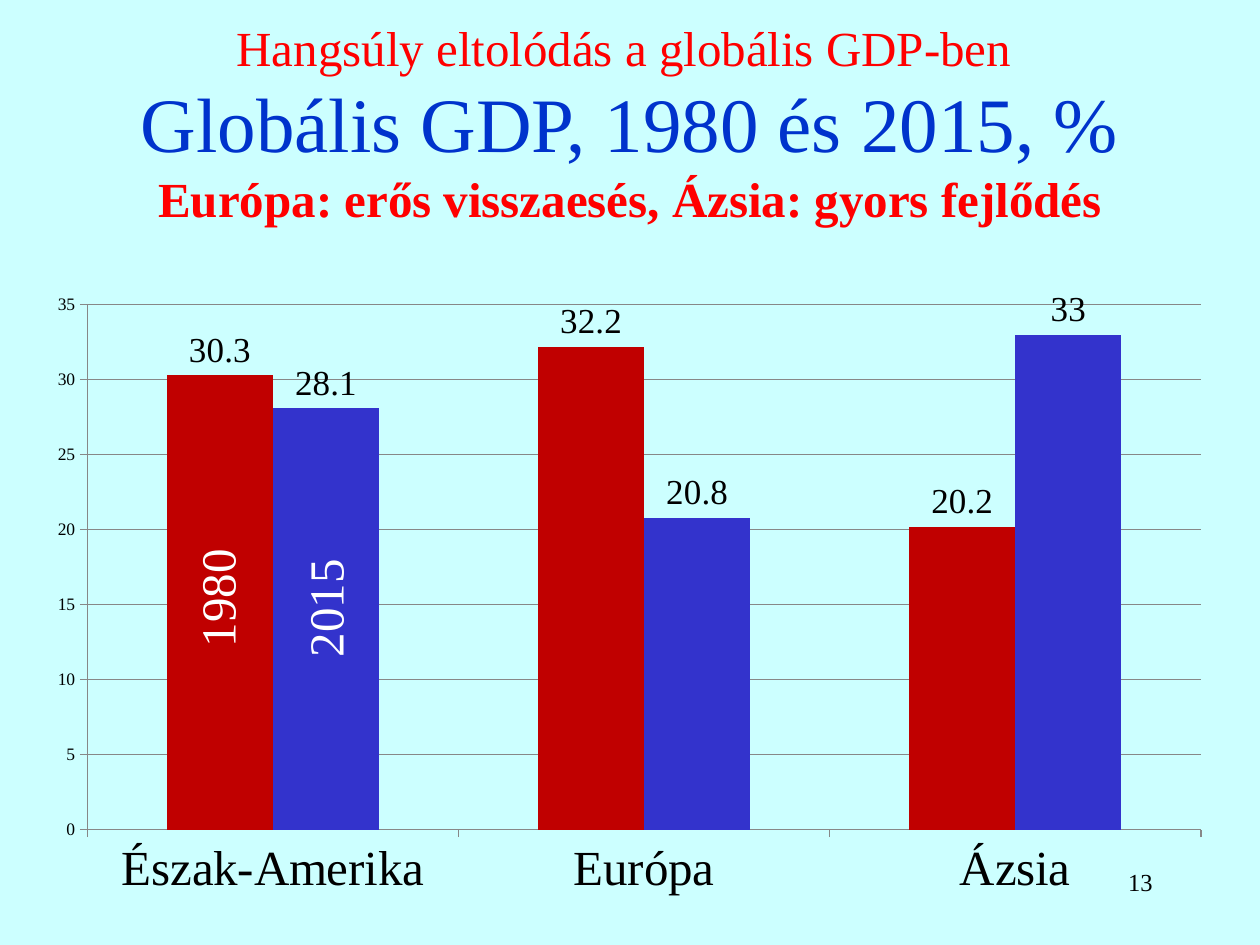
import dataclasses

import pptx
import pptx.chart.data
import pptx.dml.color
import pptx.enum.chart
import pptx.enum.text
import pptx.oxml
import pptx.util

PX = 914400 / 126
ALIGN = pptx.enum.text.PP_ALIGN
ANCHOR = pptx.enum.text.MSO_ANCHOR


@dataclasses.dataclass(frozen=True)
class Theme:
    """Colours, type sizes and font of the slide."""
    font: str = "Times New Roman"
    background: str = "CCFFFF"
    accent: str = "FF0000"
    heading: str = "0033CC"
    ink: str = "000000"
    on_bar: str = "FFFFFF"
    axis: str = "878787"
    bars: tuple = ("C00000", "3333CC")
    heading_size: int = 44
    large: int = 28
    value_size: int = 20
    number_size: int = 14
    tick_size: int = 10


THEME = Theme()


def px(n):
    """Turn pixels into EMU."""
    return pptx.util.Emu(round(n * PX))


def rgb(color):
    """Turn a hex string into a colour."""
    return pptx.dml.color.RGBColor.from_string(color)


def style_font(font, size, color=THEME.ink, bold=False):
    """Set face, size, colour and weight of a font."""
    font.name = THEME.font
    font.size = pptx.util.Pt(size)
    font.bold = bold
    font.color.rgb = rgb(color)


def add_text(s, box, lines, align=ALIGN.LEFT, anchor=ANCHOR.TOP, rotation=0, wrap=True):
    """Add a text box with lines of (text, size, colour, bold)."""
    sp = s.shapes.add_textbox(*map(px, box))
    sp.rotation = rotation
    tf = sp.text_frame
    tf.word_wrap = wrap
    tf.vertical_anchor = anchor
    p = tf.paragraphs[0]
    p.alignment = align
    for i, (text, *look) in enumerate(lines):
        if i:
            p.add_line_break()
        r = p.add_run()
        r.text = text
        style_font(r.font, *look)
    return sp


def set_plot_layout(chart, **fractions):
    """Fix the inner plot area as fractions of the chart."""
    plot_area = chart._chartSpace.chart.plotArea
    for old in plot_area.findall(pptx.oxml.ns.qn("c:layout")):
        plot_area.remove(old)
    values = "".join(f'<c:{k} val="{v}"/>' for k, v in fractions.items())
    plot_area.insert(0, pptx.oxml.parse_xml(
        f'<c:layout {pptx.oxml.ns.nsdecls("c")}><c:manualLayout>'
        '<c:layoutTarget val="inner"/><c:xMode val="edge"/><c:yMode val="edge"/>'
        f'{values}</c:manualLayout></c:layout>'))


def style_axis(axis, size):
    """Give an axis its line, ticks and label size."""
    axis.format.line.color.rgb = rgb(THEME.axis)
    axis.major_tick_mark = pptx.enum.chart.XL_TICK_MARK.OUTSIDE
    style_font(axis.tick_labels.font, size)


def add_column_chart(s, box, categories, series):
    """Add a clustered column chart with value labels."""
    data = pptx.chart.data.CategoryChartData()
    data.categories = categories
    for name, values in series.items():
        data.add_series(name, values)
    kind = pptx.enum.chart.XL_CHART_TYPE.COLUMN_CLUSTERED
    chart = s.shapes.add_chart(kind, *map(px, box), data).chart
    chart.has_title = False
    chart.has_legend = False
    style_font(chart.font, THEME.tick_size)
    set_plot_layout(chart, x=0.044, y=0.035, w=0.935, h=0.84)
    style_axis(chart.category_axis, THEME.large)
    style_axis(chart.value_axis, THEME.tick_size)
    chart.value_axis.minimum_scale = 0
    chart.value_axis.maximum_scale = 35
    chart.value_axis.major_unit = 5
    chart.value_axis.major_gridlines.format.line.color.rgb = rgb(THEME.axis)
    plot = chart.plots[0]
    plot.gap_width = 150
    plot.overlap = 0
    plot.vary_by_categories = False
    for bars, color in zip(plot.series, THEME.bars):
        bars.invert_if_negative = False
        bars.format.fill.solid()
        bars.format.fill.fore_color.rgb = rgb(color)
        labels = bars.data_labels
        labels.show_value = True
        labels.position = pptx.enum.chart.XL_LABEL_POSITION.OUTSIDE_END
        style_font(labels.font, THEME.value_size)


def main():
    """Build the slide and save it."""
    prs = pptx.Presentation()
    prs.slide_width, prs.slide_height = px(1260), px(945)
    s = prs.slides.add_slide(prs.slide_layouts[6])
    s.background.fill.solid()
    s.background.fill.fore_color.rgb = rgb(THEME.background)

    add_text(s, (0, 0, 1260, 244), [
        ("Hangsúly eltolódás a globális GDP-ben ", THEME.large, THEME.accent),
        ("Globális GDP, 1980 és 2015, %", THEME.heading_size, THEME.heading),
        ("Európa: erős visszaesés, Ázsia: gyors fejlődés", THEME.large, THEME.accent, True),
    ], align=ALIGN.CENTER, anchor=ANCHOR.MIDDLE)
    add_text(s, (903, 861, 262, 63), [("13", THEME.number_size)], align=ALIGN.RIGHT)
    add_column_chart(s, (35, 283, 1191, 625), ["Észak-Amerika", "Európa", "Ázsia"], {
        "1980": (30.3, 32.2, 20.2),
        "2015": (28.1, 20.8, 33),
    })
    for year, left, top in (("1980", 154, 561), ("2015", 262, 571)):
        add_text(s, (left, top, 125, 72), [(year, THEME.large, THEME.on_bar)],
                 rotation=270, wrap=False)

    prs.save("out.pptx")


if __name__ == "__main__":
    main()
